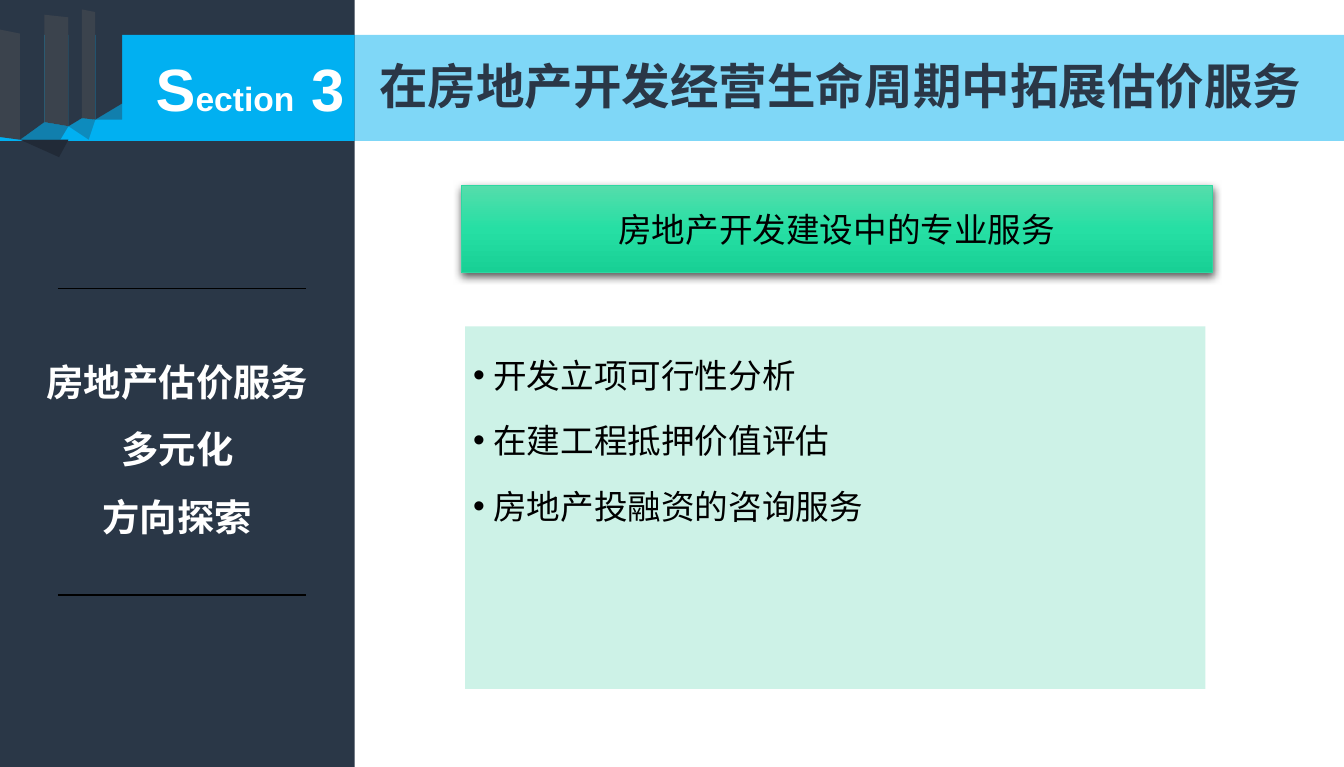
from dataclasses import dataclass
from itertools import pairwise
from lxml.etree import SubElement as Sub
from pptx import Presentation
from pptx.dml.color import RGBColor as Rgb
from pptx.enum.shapes import MSO_CONNECTOR as Link, MSO_SHAPE as Kind
from pptx.enum.text import MSO_ANCHOR as Anchor, MSO_AUTO_SIZE as Auto, PP_ALIGN as Align
from pptx.oxml.ns import qn
from pptx.util import Inches, Pt


@dataclass(frozen=True)
class Theme:
    """Colours, fonts and type sizes of the slide."""
    navy: str = "2A3747"
    dark: str = "212A37"
    slate: str = "3B434D"
    blue: str = "01B0F1"
    mint: str = "CDF2E7"
    edge: str = "2ED7A1"
    white: str = "FFFFFF"
    black: str = "000000"
    glow: tuple = ("55DDAB", "26DFA4", "18D095")
    latin: str = "Arial"
    han: str = "Noto Sans CJK SC"
    head: int = 26
    side: int = 20
    body: int = 18
    big: int = 32


T = Theme()


def put(obj, vals):
    """Set each attribute named in a dict."""
    for key, val in vals.items():
        setattr(obj, key, val)


def spot(box):
    """Turn a box in inches into lengths."""
    return [Inches(n) for n in box]


def tint(color, tone, alpha=100):
    """Set a colour and its opacity in percent."""
    color.rgb = Rgb.from_string(tone)
    if alpha < 100:
        node = color._xFill.find(qn("a:srgbClr"))
        Sub(node, qn("a:alpha"), val=str(alpha * 1000))


def paint(shape, tone, alpha=100):
    """Give a shape a flat fill with no line or shadow."""
    shape.shadow.inherit = False
    shape.fill.solid()
    tint(shape.fill.fore_color, tone, alpha)
    shape.line.fill.background()
    return shape


def block(shapes, box, tone, alpha=100):
    """Add a flat rectangle."""
    return paint(shapes.add_shape(Kind.RECTANGLE, *spot(box)), tone, alpha)


def rule(shapes, start, end):
    """Add a thin black line."""
    line = shapes.add_connector(Link.STRAIGHT, *spot(start + end))
    line.line.width = Pt(0.75)
    tint(line.line.color, T.black)
    Sub(line._element.spPr, qn("a:effectLst"))


def frame(shape, pads=(0.1, 0.05, 0.1, 0.05), anchor=Anchor.TOP):
    """Set wrapping, insets and anchor of a text frame."""
    text = shape.text_frame
    names = ("margin_left", "margin_top", "margin_right", "margin_bottom")
    put(text, dict(zip(names, spot(pads))))
    put(text, {"word_wrap": True, "auto_size": Auto.NONE, "vertical_anchor": anchor})
    return text


def write(text, rows, tone, font, bold=False, **form):
    """Fill a frame with paragraphs of (words, size) runs."""
    for i, row in enumerate(rows):
        para = text.add_paragraph() if i else text.paragraphs[0]
        put(para, form)
        for words, size in row:
            run = para.add_run()
            run.text = words
            put(run.font, {"name": font, "size": Pt(size), "bold": bold})
            tint(run.font.color, tone)
            Sub(run._r.rPr, qn("a:ea"), typeface=font)


def bullet(para, gap):
    """Give a paragraph a hanging dot."""
    props = para._p.get_or_add_pPr()
    put_in = Inches(gap)
    props.set("marL", str(put_in))
    props.set("indent", str(-put_in))
    Sub(props, qn("a:buFont"), typeface=T.latin)
    Sub(props, qn("a:buChar"), char="•")


def folds(shapes, box):
    """Draw the folded paper strip and its shade."""
    left, top = (round(n * 100) for n in box[:2])

    def patch(pts, tone, alpha=100):
        pts = [(left + x, top + y) for x, y in pts]
        form = shapes.build_freeform(*pts[0], scale=Inches(0.01))
        form.add_line_segments(pts[1:])
        paint(form.convert_to_shape(), tone, alpha)

    patch([(15, 104), (33, 91), (51, 94), (45, 104)], T.navy, 40)
    patch([(51, 94), (61, 88), (71, 89), (66, 104)], T.navy, 30)
    patch([(71, 89), (91, 77), (91, 89)], T.navy, 40)
    patch([(15, 104), (51, 104), (44, 117)], T.dark)
    creases = [(0, 22, 102), (15, 25, 104), (33, 11, 91), (51, 13, 94),
               (61, 7, 88), (71, 9, 89), (91, 0, 77)]
    for i, ((x, up, low), (x2, up2, low2)) in enumerate(pairwise(creases)):
        patch([(x, up), (x2, up2), (x2, low2), (x, low)], T.navy if i % 2 else T.slate)


def sidebar(shapes, box):
    """Draw the dark side panel with its topic."""
    x, y, w, h = box
    block(shapes, box, T.navy)
    for drop in (2.15, 4.43):
        rule(shapes, (x + 0.43, y + drop), (x + 2.28, y + drop))
    text = frame(shapes.add_textbox(*spot((x, y + 2.46, w, 1.56))))
    rows = [[(words, T.side)] for words in ("房地产估价服务", "多元化", "方向探索")]
    write(text, rows, T.white, T.han, True, alignment=Align.CENTER, line_spacing=1.5)


def banner(shapes, box, split):
    """Draw the top band with section mark and title."""
    x, y, w, h = box
    block(shapes, (x, y, split, h), T.blue)
    block(shapes, (x + split, y, w - split, h), T.blue, 50)
    folds(shapes, (x, y - 0.26, 0.91, 1.17))
    mark = frame(shapes.add_textbox(*spot((x + 1.06, y + 0.08, 2.6, 0.64))))
    write(mark, [[("S", T.big), ("ection", T.body), (" 3", T.big)]], T.white, T.latin, True)
    title = shapes.title
    put(title, dict(zip(("left", "top", "width", "height"),
                        spot((x + split + 0.08, y + 0.11, w - split - 0.08, 0.54)))))
    write(frame(title), [[("在房地产开发经营生命周期中拓展估价服务", T.head)]],
          T.navy, T.han, True, alignment=Align.LEFT)
    shapes._spTree.append(title._element)


def card(shapes, box):
    """Draw the green heading card with gradient and shadow."""
    shape = block(shapes, box, T.edge)
    shape.fill.gradient()
    shape.fill.gradient_angle = 270
    props = shape._element.spPr
    stops = props.find(qn("a:gradFill")).find(qn("a:gsLst"))
    for stop in list(stops):
        stops.remove(stop)
    for i, tone in enumerate(T.glow):
        stop = Sub(stops, qn("a:gs"), pos=str(i * 50000))
        Sub(stop, qn("a:srgbClr"), val=tone)
    shape.line.width = Pt(0.5)
    tint(shape.line.color, T.edge)
    cast = Sub(props.find(qn("a:effectLst")), qn("a:outerShdw"), blurRad=str(Pt(4.5)),
               dist=str(Pt(1.5)), dir="5400000", algn="ctr", rotWithShape="0")
    Sub(Sub(cast, qn("a:srgbClr"), val=T.black), qn("a:alpha"), val="63000")
    write(frame(shape, (0.08, 0.04, 0.08, 0.04), Anchor.MIDDLE),
          [[("房地产开发建设中的专业服务", T.body)]], T.black, T.han, alignment=Align.CENTER)


def panel(shapes, box):
    """Draw the pale panel with its bulleted list."""
    text = frame(block(shapes, box, T.mint), (0.06, 0.06, 0.09, 0.1))
    items = ("开发立项可行性分析", "在建工程抵押价值评估", "房地产投融资的咨询服务")
    write(text, [[(item, T.body)] for item in items], T.black, T.han,
          alignment=Align.LEFT, line_spacing=1.5, space_after=Pt(2.7))
    for para in text.paragraphs:
        bullet(para, 0.15)


def main():
    """Build and save the slide."""
    deck = Presentation()
    put(deck, {"slide_width": Inches(10), "slide_height": Inches(5.71)})
    shapes = deck.slides.add_slide(deck.slide_layouts[5]).shapes
    sidebar(shapes, (0, 0, 2.64, 5.71))
    banner(shapes, (0, 0.26, 10, 0.79), 2.64)
    card(shapes, (3.43, 1.38, 5.59, 0.65))
    panel(shapes, (3.46, 2.43, 5.51, 2.7))
    deck.save("out.pptx")


if __name__ == "__main__":
    main()
